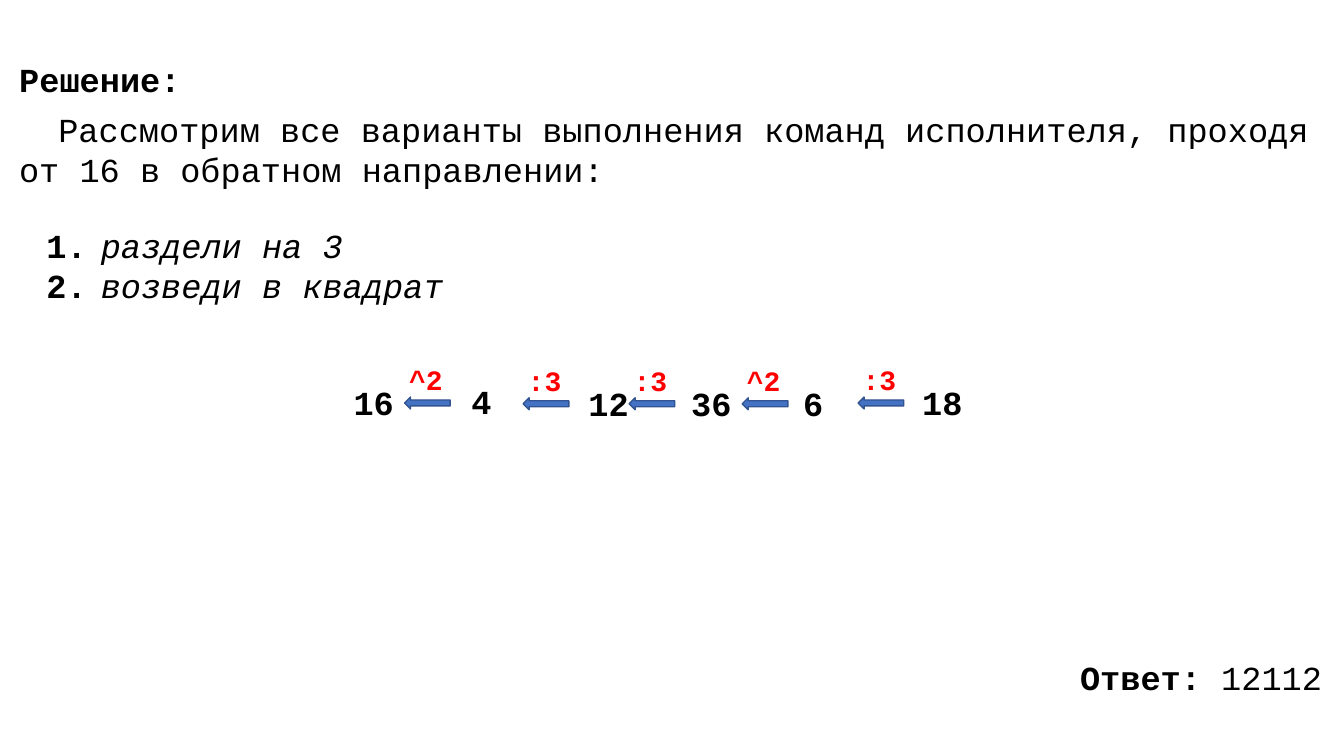
import pptx
import pptx.util
import pptx.dml.color
import pptx.enum.shapes
import pptx.enum.text
import pptx.oxml
import pptx.oxml.ns
from dataclasses import dataclass

Cm, Pt = pptx.util.Cm, pptx.util.Pt

# Content: runs are (text, bold, italic)
TITLE = [("Решение:", True, False)]
INTRO = [("Рассмотрим все варианты выполнения команд исполнителя, "
          "проходя от 16 в обратном направлении:", False, False)]
COMMANDS = ["раздели на 3", "возведи в квадрат"]
ANSWER = [("Ответ: ", True, False), ("12112", False, False)]

# Chain: (text, left, top) for numbers and for arrows, in cm
NUMBERS = [("16", 8.66, 9.5), ("4", 11.63, 9.47), ("12", 14.58, 9.53),
           ("36", 17.17, 9.53), ("6", 19.99, 9.53), ("18", 22.99, 9.5)]
ARROWS = [("^2", 10.62, 9.58), (":3", 13.61, 9.6), (":3", 16.28, 9.6),
          ("^2", 19.13, 9.6), (":3", 22.05, 9.58)]


@dataclass(frozen=True)
class Theme:
    font: str = "Courier New"
    body: int = 24
    label: int = 20
    text: str = "000000"
    accent: str = "FF0000"
    arrow: str = "4472C4"
    outline: str = "325491"


THEME = Theme()


def rgb(value):
    return pptx.dml.color.RGBColor.from_string(value)


def add_runs(p, runs, size=THEME.body, color=THEME.text):
    for text, bold, italic in runs:
        r = p.add_run()
        r.text = text
        r.font.name, r.font.size = THEME.font, Pt(size)
        r.font.bold, r.font.italic = bold, italic
        r.font.color.rgb = rgb(color)


def set_indent(p, indent, tab=None):
    pPr = p._p.get_or_add_pPr()
    pPr.set("marL", "0")
    pPr.set("indent", str(Cm(indent)))
    if tab:
        tabs = pptx.oxml.parse_xml(
            f'<a:tabLst {pptx.oxml.ns.nsdecls("a")}><a:tab pos="{Cm(tab)}" algn="l"/></a:tabLst>')
        pPr.append(tabs)


def add_text(slide, box, paragraphs, size=THEME.body, color=THEME.text,
             wrap=True, indent=0, tab=None):
    sp = slide.shapes.add_textbox(*map(Cm, box))
    tf = sp.text_frame
    tf.word_wrap = wrap
    tf.auto_size = pptx.enum.text.MSO_AUTO_SIZE.SHAPE_TO_FIT_TEXT
    for i, runs in enumerate(paragraphs):
        p = tf.add_paragraph() if i else tf.paragraphs[0]
        if indent:
            set_indent(p, indent, tab)
        add_runs(p, runs, size, color)


def add_arrow(slide, left, top):
    sp = slide.shapes.add_shape(pptx.enum.shapes.MSO_SHAPE.DOWN_ARROW,
                                Cm(left), Cm(top), Cm(0.3), Cm(1.15))
    sp.rotation = 90
    sp.shadow.inherit = False
    sp.fill.solid()
    sp.fill.fore_color.rgb = rgb(THEME.arrow)
    sp.line.color.rgb = rgb(THEME.outline)
    sp.line.width = Pt(1)


def main():
    prs = pptx.Presentation()
    prs.slide_width, prs.slide_height = Cm(33.87), Cm(19.05)
    slide = prs.slides.add_slide(prs.slide_layouts[5])

    # Title
    title = slide.shapes.title
    title.left, title.top, title.width, title.height = map(Cm, (0.23, 1.35, 16.94, 1.28))
    tf = title.text_frame
    tf.vertical_anchor = pptx.enum.text.MSO_ANCHOR.TOP
    tf.auto_size = pptx.enum.text.MSO_AUTO_SIZE.NONE
    tf.paragraphs[0].alignment = pptx.enum.text.PP_ALIGN.LEFT
    add_runs(tf.paragraphs[0], TITLE)

    # Explanation, numbered commands and answer
    add_text(slide, (0.23, 2.62, 33.43, 2.31), [INTRO], indent=0.99)
    commands = [[(f"{n}.\t", True, False), (command, False, True)]
                for n, command in enumerate(COMMANDS, 1)]
    add_text(slide, (-4.06, 5.54, 17.35, 2.31), commands, indent=4.98, tab=6.25)
    add_text(slide, (26.97, 16.43, 7.65, 1.28), [ANSWER])

    # Chain of numbers; each digit widens the box by the same step
    for text, left, top in NUMBERS:
        width = 0.5 + 0.52 * len(text)
        add_text(slide, (left, top, width, 1.28), [[(text, True, False)]], wrap=False)

    # Arrows with their operations above
    for text, left, top in ARROWS:
        add_arrow(slide, left, top)
        add_text(slide, (left - 0.56, top - 0.56, 1.37, 1.11), [[(text, True, False)]],
                 THEME.label, THEME.accent, wrap=False)

    prs.save("out.pptx")


if __name__ == "__main__":
    main()
